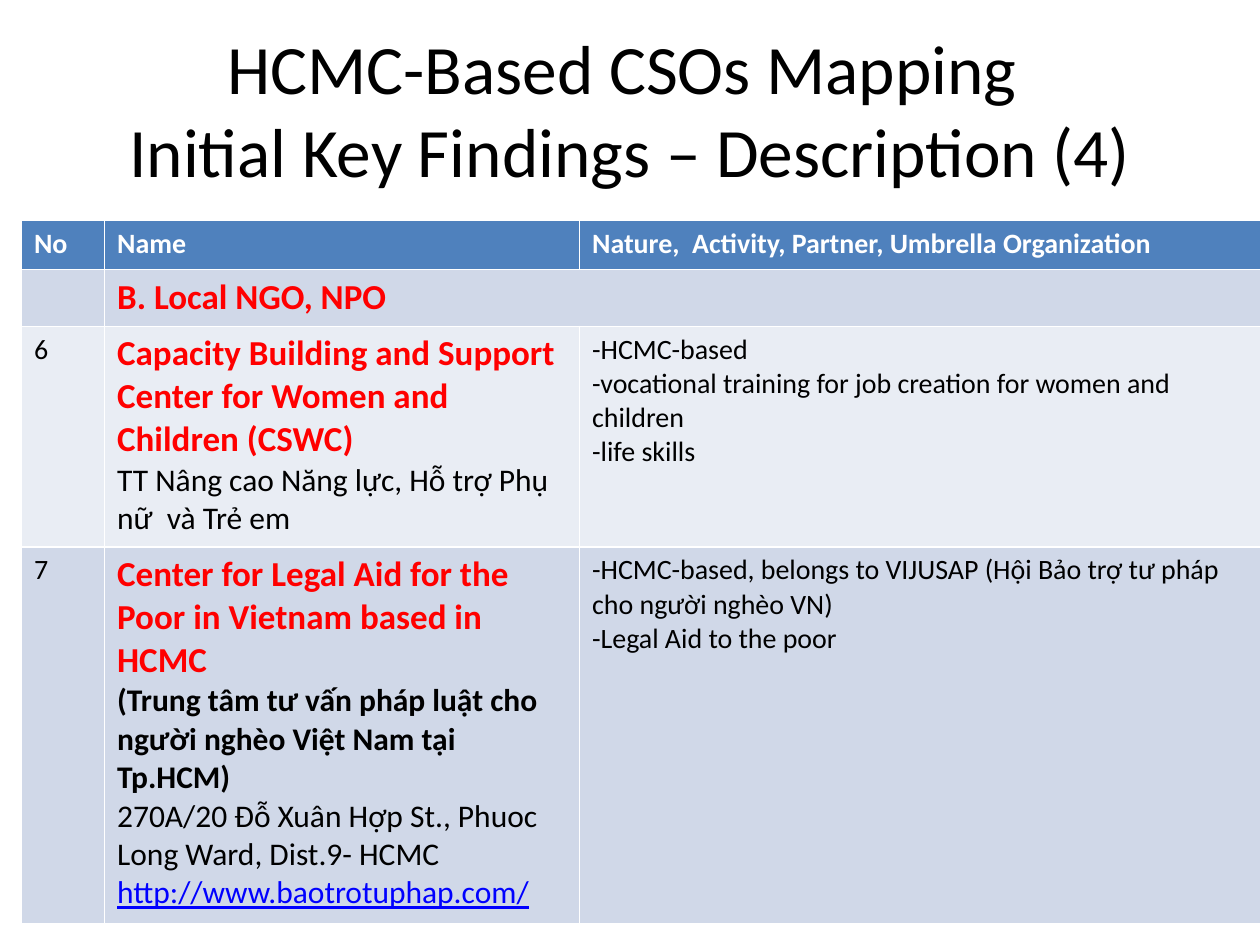
import pptx
import pptx.dml.color
import pptx.enum.text
import pptx.util
from pptx.util import Inches

RED, BLACK, WHITE, BLUE = "FF0000", "000000", "FFFFFF", "0000FF"
HEADER, BAND_DARK, BAND_LIGHT = "4F81BD", "D0D8E8", "E9EDF4"
COLUMN_WIDTHS = [0.66, 3.77, 5.41]
ROW_HEIGHTS = [0.39, 0.45, 1.75, 2.99]
ROW_FILLS = [HEADER, BAND_DARK, BAND_LIGHT, BAND_DARK]

HEADING = dict(size=16, color=WHITE, bold=True)
NAME = dict(size=20, color=RED, bold=True)
LOCAL_NAME = dict(size=18, bold=True)
DETAIL = dict(size=18)
LINK = dict(size=18, color=BLUE, underline=True)
PLAIN = dict(size=16)

ROWS = [
    [
        [[("No", HEADING)]],
        [[("Name", HEADING)]],
        [[("Nature,  Activity, Partner, Umbrella Organization", HEADING)]],
    ],
    [[], [[("B. Local NGO, NPO", NAME)]], []],
    [
        [[("6", PLAIN)]],
        [
            [("Capacity Building and Support Center for Women and Children (CSWC)", NAME)],
            [("TT Nâng cao Năng lực, Hỗ trợ Phụ nữ  và Trẻ em", DETAIL)],
        ],
        [
            [("-HCMC-based", PLAIN)],
            [("-vocational training for job creation for women and children", PLAIN)],
            [("-life skills", PLAIN)],
        ],
    ],
    [
        [[("7", PLAIN)]],
        [
            [("Center for Legal Aid for the Poor in Vietnam based in HCMC", NAME)],
            [
                ("(Trung tâm tư vấn pháp luật cho người nghèo Việt Nam tại Tp.HCM)\n", LOCAL_NAME),
                ("270A/20 Đỗ Xuân Hợp St., Phuoc Long Ward, Dist.9- HCMC", DETAIL),
            ],
            [("http://www.baotrotuphap.com/", LINK)],
        ],
        [
            [("-HCMC-based, belongs to VIJUSAP (Hội Bảo trợ tư pháp cho người nghèo VN)", PLAIN)],
            [("-Legal Aid to the poor", PLAIN)],
        ],
    ],
]


def rgb(value):
    """Return the colour for a hex string."""
    return pptx.dml.color.RGBColor.from_string(value)


def add_text(p, text, size=16, color=BLACK, bold=False, underline=False):
    """Append formatted text to a paragraph, breaking lines at newlines."""
    for i, line in enumerate(text.split("\n")):
        if i:
            p.add_line_break()
        if line:
            r = p.add_run()
            r.text = line
            r.font.name = "Calibri"
            r.font.size = pptx.util.Pt(size)
            r.font.bold = bold
            r.font.underline = underline
            r.font.color.rgb = rgb(color)


def add_title(s, left, top, width, height):
    """Place and fill the title placeholder."""
    sp = s.shapes.title
    sp.left, sp.top, sp.width, sp.height = map(Inches, (left, top, width, height))
    tf = sp.text_frame
    tf.auto_size = pptx.enum.text.MSO_AUTO_SIZE.NONE
    tf.vertical_anchor = pptx.enum.text.MSO_ANCHOR.MIDDLE
    p = tf.paragraphs[0]
    p.alignment = pptx.enum.text.PP_ALIGN.CENTER
    add_text(p, "HCMC-Based CSOs Mapping \nInitial Key Findings – Description (4)", size=39.6)


def fill_cell(cell, paragraphs, fill):
    """Colour a cell and write its paragraphs."""
    cell.fill.solid()
    cell.fill.fore_color.rgb = rgb(fill)
    tf = cell.text_frame
    for i, runs in enumerate(paragraphs):
        p = tf.add_paragraph() if i else tf.paragraphs[0]
        for text, style in runs:
            add_text(p, text, **style)


def add_organization_table(s, left, top, width, height):
    """Add the table of organizations with its section row merged."""
    box = map(Inches, (left, top, width, height))
    table = s.shapes.add_table(len(ROWS), len(COLUMN_WIDTHS), *box).table
    for column, column_width in zip(table.columns, COLUMN_WIDTHS):
        column.width = Inches(column_width)
    for row, row_height, fill, contents in zip(table.rows, ROW_HEIGHTS, ROW_FILLS, ROWS):
        row.height = Inches(row_height)
        for cell, paragraphs in zip(row.cells, contents):
            fill_cell(cell, paragraphs, fill)
    table.cell(1, 1).merge(table.cell(1, 2))


def main():
    """Build and save the slide."""
    prs = pptx.Presentation()
    prs.slide_width, prs.slide_height = Inches(10), Inches(7.5)
    s = prs.slides.add_slide(prs.slide_layouts[5])
    add_title(s, 0.5, 0.3, 9, 1.12)
    add_organization_table(s, 0.17, 1.75, sum(COLUMN_WIDTHS), sum(ROW_HEIGHTS))
    prs.save("out.pptx")


if __name__ == "__main__":
    main()
